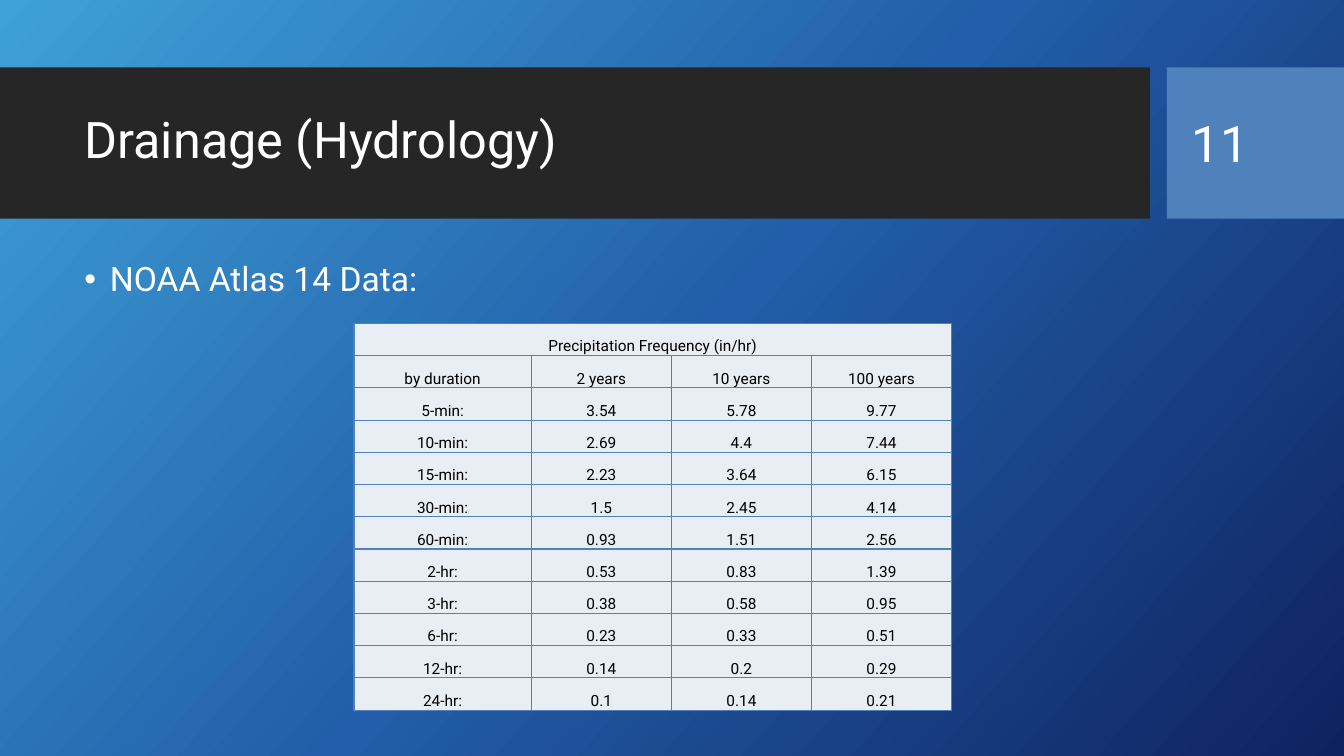
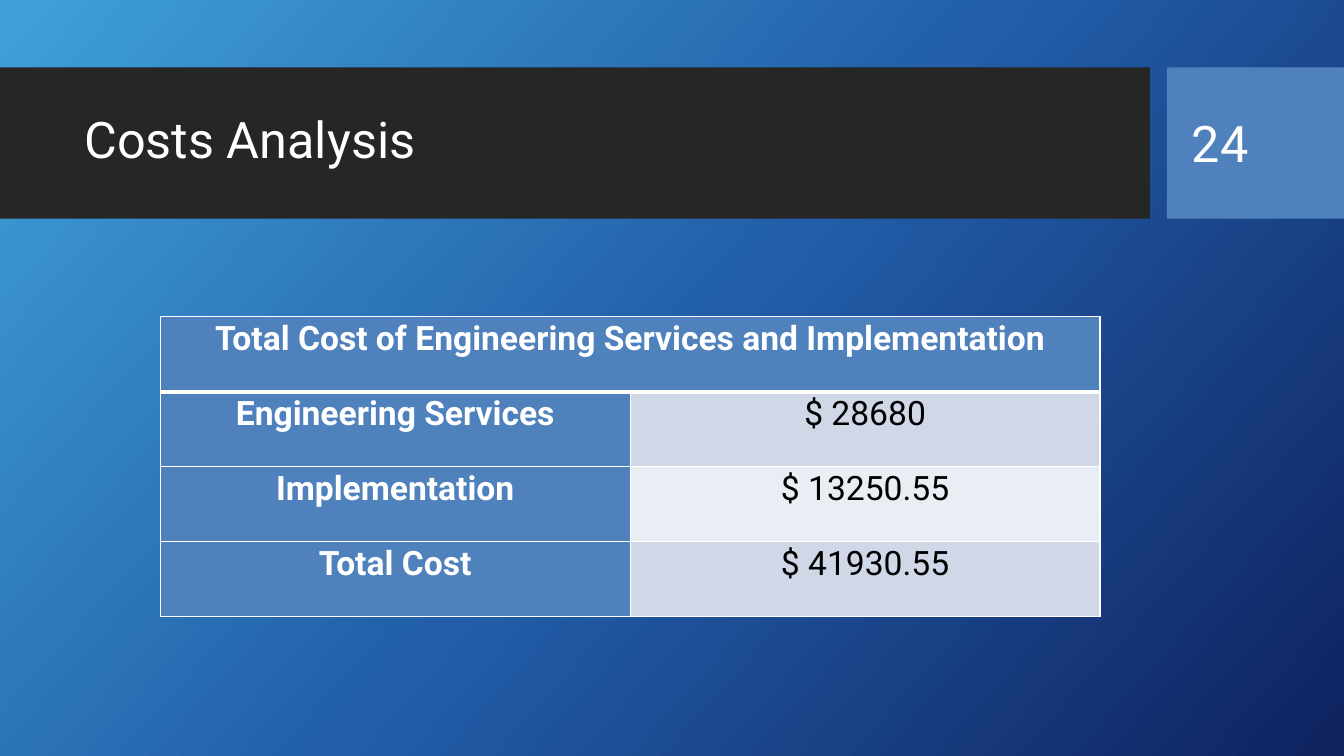
from copy import deepcopy

from pptx import Presentation
from pptx.dml.color import RGBColor
from pptx.enum.shapes import MSO_SHAPE as Preset
from pptx.enum.text import MSO_ANCHOR as Anchor, PP_ALIGN as Align
from pptx.oxml import parse_xml
from pptx.oxml.ns import nsdecls, qn
from pptx.util import Cm, Pt

FONT = "Roboto"
WHITE, BLACK, CHARCOAL = "FFFFFF", "000000", "262626"
BLUE, PALE, SOFT = "4F81BD", "E9EDF4", "D0D8E8"
BACKDROP = [(0, "3FA1D7"), (0.5, "225EA9"), (1, "0F225F")]
BACKDROP_ANGLE = 360 - 42

PRECIPITATION = [
    ["Precipitation Frequency (in/hr)", "", "", ""],
    ["by duration", "2 years", "10 years", "100 years"],
    ["5-min:", "3.54", "5.78", "9.77"],
    ["10-min:", "2.69", "4.4", "7.44"],
    ["15-min:", "2.23", "3.64", "6.15"],
    ["30-min:", "1.5", "2.45", "4.14"],
    ["60-min:", "0.93", "1.51", "2.56"],
    ["2-hr:", "0.53", "0.83", "1.39"],
    ["3-hr:", "0.38", "0.58", "0.95"],
    ["6-hr:", "0.23", "0.33", "0.51"],
    ["12-hr:", "0.14", "0.2", "0.29"],
    ["24-hr:", "0.1", "0.14", "0.21"],
]
COSTS = [
    ["Total Cost of Engineering Services and Implementation", ""],
    ["Engineering Services", "$ 28680"],
    ["Implementation", "$ 13250.55"],
    ["Total Cost", "$ 41930.55"],
]


def rgb(value):
    return RGBColor.from_string(value)


def write(para, text, size=24, color=WHITE, bold=False, align=Align.LEFT, spacing=1.0):
    para.alignment = align
    para.line_spacing = spacing
    span = para.add_run()
    span.text = text
    span.font.name = FONT
    span.font.size = Pt(size)
    span.font.bold = bold
    span.font.color.rgb = rgb(color)


def set_borders(cell, color, top=1, bottom=1):
    widths = {"lnL": 1, "lnR": 1, "lnT": top, "lnB": bottom}
    properties = cell._tc.get_or_add_tcPr()
    for place, (side, width) in enumerate(widths.items()):
        properties.insert(place, parse_xml(
            f'<a:{side} {nsdecls("a")} w="{Pt(width)}"><a:solidFill>'
            f'<a:srgbClr val="{color}"/></a:solidFill></a:{side}>'))


def precipitation_look(row, column):
    return PALE, {"size": 11, "color": BLACK}


def cost_look(row, column):
    """Blue for the heading row and first column, bands for the amounts."""
    if row == 0 or column == 0:
        return BLUE, {"bold": True, "spacing": 1.07}
    return (SOFT if row % 2 else PALE), {"color": BLACK, "spacing": 1.07}


class Deck:
    """Holds the presentation, its common style and the current slide."""

    def __init__(self):
        self.deck = Presentation()
        self.deck.slide_width, self.deck.slide_height = Cm(33.87), Cm(19.05)
        self.page = None

    def add_page(self, title, number):
        self.page = self.deck.slides.add_slide(self.deck.slide_layouts[6])
        self.backdrop()
        self.band(0, 28.98, CHARCOAL)
        self.band(29.41, 4.46, BLUE)
        self.text(title, 1.88, 2.08, 26.7, 3, anchor=Anchor.MIDDLE, size=36, spacing=0.9)
        self.text(number, 29.79, 2.08, 3.2, 3.02, anchor=Anchor.MIDDLE, size=36)

    def backdrop(self):
        fill = self.page.background.fill
        fill.gradient()
        fill.gradient_angle = BACKDROP_ANGLE
        stops = self.page.element.find(".//" + qn("a:gsLst"))
        stops.append(deepcopy(stops[-1]))
        for stop, (position, color) in zip(fill.gradient_stops, BACKDROP):
            stop.position = position
            stop.color.rgb = rgb(color)

    def band(self, left, width, color):
        box = self.page.shapes.add_shape(
            Preset.RECTANGLE, Cm(left), Cm(1.7), Cm(width), Cm(3.81))
        box.shadow.inherit = False
        box.fill.solid()
        box.fill.fore_color.rgb = rgb(color)
        box.line.fill.background()

    def text(self, text, left, top, width, height, anchor=Anchor.TOP, bullet=False, **style):
        box = self.page.shapes.add_textbox(Cm(left), Cm(top), Cm(width), Cm(height))
        frame = box.text_frame
        frame.word_wrap = True
        frame.vertical_anchor = anchor
        para = frame.paragraphs[0]
        if bullet:
            properties = para._p.get_or_add_pPr()
            properties.set("marL", str(Cm(0.64)))
            properties.set("indent", str(-Cm(0.64)))
            properties.append(parse_xml(f'<a:buFont {nsdecls("a")} typeface="Arial"/>'))
            properties.append(parse_xml(f'<a:buChar {nsdecls("a")} char="•"/>'))
        write(para, text, **style)

    def table(self, rows, left, top, widths, height, look, border,
              margins, anchor=Anchor.TOP, heading_rule=1):
        """Draw rows under a heading that spans all columns.

        look gives the fill and text format of a cell; margins are the side,
        top and bottom insets of each cell.
        """
        table = self.page.shapes.add_table(
            len(rows), len(widths), Cm(left), Cm(top), Cm(sum(widths)), Cm(height)).table
        table.first_row = table.horz_banding = False
        for column, width in zip(table.columns, widths):
            column.width = Cm(width)
        side, above, below = margins
        for r, values in enumerate(rows):
            table.rows[r].height = Cm(height / len(rows))
            for c, value in enumerate(values):
                cell = table.cell(r, c)
                color, style = look(r, c)
                cell.fill.solid()
                cell.fill.fore_color.rgb = rgb(color)
                cell.margin_left = cell.margin_right = Cm(side)
                cell.margin_top, cell.margin_bottom = Cm(above), Cm(below)
                cell.vertical_anchor = anchor
                set_borders(cell, border, top=heading_rule if r == 1 else 1,
                            bottom=heading_rule if r == 0 else 1)
                if value:
                    write(cell.text_frame.paragraphs[0], value, align=Align.CENTER, **style)
        table.cell(0, 0).merge(table.cell(0, len(widths) - 1))


def main():
    deck = Deck()

    deck.add_page("Drainage (Hydrology)", "11")
    deck.text("NOAA Atlas 14 Data:", 1.88, 6.5, 26.7, 10, bullet=True, spacing=0.9)
    deck.table(PRECIPITATION, 8.92, 8.15, [4.47] + [3.53] * 3, 9.75, precipitation_look,
               border=BLUE, margins=(0.03, 0.03, 0), anchor=Anchor.BOTTOM)

    deck.add_page("Costs Analysis", "24")
    deck.table(COSTS, 4.04, 7.98, [11.84] * 2, 7.56, cost_look,
               border=WHITE, margins=(0.18, 0, 0), heading_rule=3)

    deck.deck.save("out.pptx")


if __name__ == "__main__":
    main()
